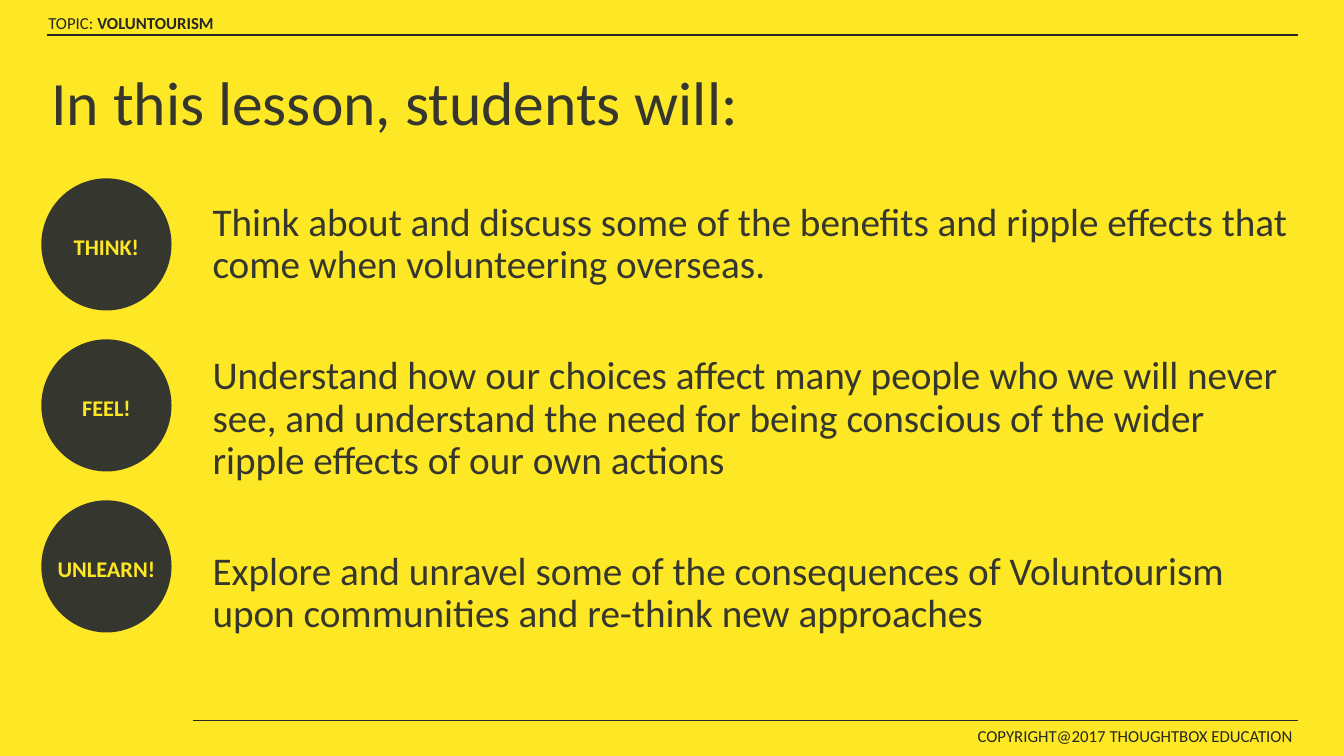
from dataclasses import dataclass

import pptx
import pptx.dml.color
import pptx.enum.shapes
import pptx.enum.text
import pptx.oxml.ns
import pptx.util
from lxml import etree

Pt = pptx.util.Pt
RGB = pptx.dml.color.RGBColor
ALIGN = pptx.enum.text.PP_ALIGN
ANCHOR = pptx.enum.text.MSO_ANCHOR


@dataclass(frozen=True)
class Theme:
    font: str = "Calibri"
    yellow: RGB = RGB(0xFE, 0xE7, 0x25)
    charcoal: RGB = RGB(0x35, 0x37, 0x2F)
    ink: RGB = RGB(0x25, 0x28, 0x23)
    title_size: float = 44
    body_size: float = 28
    badge_size: float = 16
    margin_size: float = 12


@dataclass(frozen=True)
class Box:
    left: float
    top: float
    width: float
    height: float

    def in_points(self) -> tuple:
        return Pt(self.left), Pt(self.top), Pt(self.width), Pt(self.height)


@dataclass(frozen=True)
class Rule:
    start: float
    end: float
    y: float


@dataclass(frozen=True)
class Aim:
    badge: str
    goal: str


THEME = Theme()
AIMS = [
    Aim("THINK!", "Think about and discuss some of the benefits and ripple effects "
        "that come when volunteering overseas."),
    Aim("FEEL!", "Understand how our choices affect many people who we will never see, "
        "and understand the need for being conscious of the wider ripple effects "
        "of our own actions"),
    Aim("UNLEARN!", "Explore and unravel some of the consequences of Voluntourism "
        "upon communities and re-think new approaches"),
]
RULES = [Rule(33.8, 927.4, 25), Rule(138.2, 927.4, 514.6)]
FIRST_BADGE = Box(29.5, 127.4, 93, 94.4)
BADGE_PITCH = 115


def write_text(frame, *paragraphs, size: float, color: RGB, bold: bool = False,
               bold_end: str = "", align=ALIGN.LEFT, anchor=ANCHOR.TOP,
               line_spacing: float = 1.0, gap: float = 0, wrap: bool = True) -> None:
    frame.word_wrap = wrap
    frame.auto_size = pptx.enum.text.MSO_AUTO_SIZE.NONE
    frame.vertical_anchor = anchor
    for index, words in enumerate(paragraphs):
        paragraph = frame.add_paragraph() if index else frame.paragraphs[0]
        paragraph.alignment = align
        paragraph.line_spacing = line_spacing
        paragraph.space_before = Pt(gap if index else 0)
        pieces = [(words, bold)] + ([(bold_end, True)] if bold_end else [])
        for piece, heavy in pieces:
            run = paragraph.add_run()
            run.text = piece
            run.font.name = THEME.font
            run.font.size = Pt(size)
            run.font.bold = heavy
            run.font.color.rgb = color


def add_text(slide, box: Box, *paragraphs, **text_format) -> None:
    write_text(slide.shapes.add_textbox(*box.in_points()).text_frame,
               *paragraphs, **text_format)


def add_rule(slide, rule: Rule) -> None:
    line = slide.shapes.add_connector(
        pptx.enum.shapes.MSO_CONNECTOR.STRAIGHT,
        Pt(rule.start), Pt(rule.y), Pt(rule.end), Pt(rule.y))
    line.line.color.rgb = THEME.ink
    line.line.width = Pt(1)
    etree.SubElement(line._element.spPr, pptx.oxml.ns.qn("a:effectLst"))


def add_badge(slide, box: Box, label: str) -> None:
    badge = slide.shapes.add_shape(pptx.enum.shapes.MSO_SHAPE.OVAL, *box.in_points())
    badge.shadow.inherit = False
    badge.fill.solid()
    badge.fill.fore_color.rgb = THEME.charcoal
    badge.line.fill.background()
    write_text(badge.text_frame, label, size=THEME.badge_size, color=THEME.yellow,
               bold=True, align=ALIGN.CENTER, anchor=ANCHOR.MIDDLE,
               line_spacing=1.15, wrap=False)


def add_title(slide, box: Box, words: str) -> None:
    title = slide.shapes.title
    title.left, title.top, title.width, title.height = box.in_points()
    write_text(title.text_frame, words, size=THEME.title_size, color=THEME.charcoal,
               anchor=ANCHOR.MIDDLE, line_spacing=0.9)


def main() -> None:
    deck = pptx.Presentation()
    deck.slide_width, deck.slide_height = Pt(960), Pt(540)
    slide = deck.slides.add_slide(deck.slide_layouts[5])
    slide.background.fill.solid()
    slide.background.fill.fore_color.rgb = THEME.yellow

    add_text(slide, Box(27.4, 5.8, 137.5, 21.6), "TOPIC: ", bold_end="VOLUNTOURISM",
             size=THEME.margin_size, color=THEME.ink)
    add_text(slide, Box(691.2, 514.8, 244.8, 22.3), "COPYRIGHT@2017 THOUGHTBOX EDUCATION",
             size=THEME.margin_size, color=THEME.ink)
    for rule in RULES:
        add_rule(slide, rule)

    add_title(slide, Box(29.5, 23, 828, 104.4), "In this lesson, students will:")
    add_text(slide, Box(144.7, 141.1, 785.5, 342.7), *(aim.goal for aim in AIMS),
             size=THEME.body_size, color=THEME.charcoal, line_spacing=0.9, gap=49)
    for row, aim in enumerate(AIMS):
        top = FIRST_BADGE.top + row * BADGE_PITCH
        add_badge(slide, Box(FIRST_BADGE.left, top, FIRST_BADGE.width, FIRST_BADGE.height),
                  aim.badge)

    deck.save("out.pptx")


if __name__ == "__main__":
    main()
